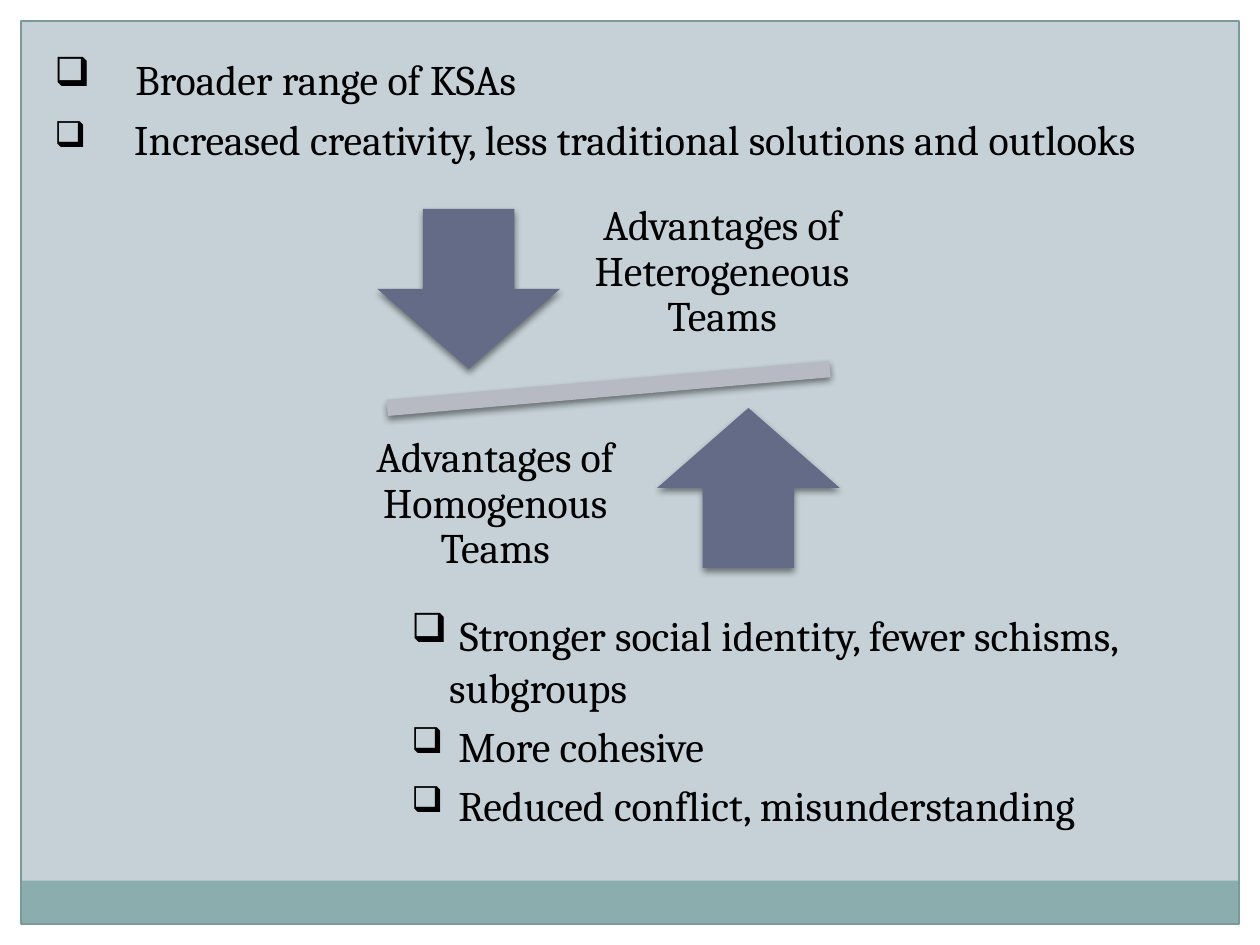
from dataclasses import dataclass
from lxml.etree import SubElement
from pptx import Presentation
from pptx.dml.color import RGBColor
from pptx.enum.shapes import MSO_SHAPE
from pptx.enum.text import MSO_ANCHOR, PP_ALIGN
from pptx.oxml.ns import qn
from pptx.util import Inches, Pt


@dataclass(frozen=True)
class Theme:
    background: str = "C5D1D7"
    margin: str = "FFFFFF"
    band: str = "8CADAE"
    frame: str = "7C999A"
    arrow: str = "646B86"
    beam: str = "B8BAC3"
    ink: str = "000000"
    font: str = "Cambria"
    text: int = 24
    lead: int = 27


THEME = Theme()
COLUMNS, ROWS = 60, 45
WIDTH, HEIGHT = Inches(10), Inches(7.5)

LISTS = [
    {"area": (2, 2, 55, 10.5), "indent": 0.56, "items": [
        "Broader range of KSAs",
        "Increased creativity, less traditional solutions and outlooks",
    ]},
    {"area": (19, 28.5, 38.5, 9.3), "indent": 0.3, "items": [
        "Stronger social identity, fewer schisms, subgroups",
        "More cohesive",
        "Reduced conflict, misunderstanding",
    ]},
]

PIVOT = (28.98, 18.5)
BEAM_SIZE = (28.8, 3.3)
ARROW_SIZE, ARROW_OFFSET = (8.7, 7.62), (6.66, 4.74)
LABEL_SIZE, LABEL_OFFSET = (16.5, 8), (5.4, 5.52)
SIDES = [
    (-1, MSO_SHAPE.DOWN_ARROW, "Advantages of Heterogeneous Teams"),
    (1, MSO_SHAPE.UP_ARROW, "Advantages of Homogenous Teams"),
]


def place(left, top, width, height):
    return (int(WIDTH * left / COLUMNS), int(HEIGHT * top / ROWS),
            int(WIDTH * width / COLUMNS), int(HEIGHT * height / ROWS))


def around_pivot(size, offset=(0, 0), across=0, down=0):
    width, height = size
    return (PIVOT[0] + across * offset[0] - width / 2,
            PIVOT[1] + down * offset[1] - height / 2, width, height)


def add_block(page, kind, area, fill=None, line=None):
    block = page.shapes.add_shape(kind, *place(*area))
    block.shadow.inherit = False
    if fill:
        block.fill.solid()
        block.fill.fore_color.rgb = RGBColor.from_string(fill)
    else:
        block.fill.background()
    if line:
        block.line.color.rgb = RGBColor.from_string(line)
        block.line.width = Pt(0.75)
    else:
        block.line.fill.background()
    return block


def add_shadow(block):
    effects = block._element.spPr.find(qn("a:effectLst"))
    shadow = SubElement(effects, qn("a:outerShdw"), blurRad=str(Pt(4)),
                        dist=str(Pt(2)), dir="5400000", rotWithShape="0")
    color = SubElement(shadow, qn("a:srgbClr"), val=THEME.ink)
    SubElement(color, qn("a:alpha"), val="45000")


def add_text_box(page, area):
    box = page.shapes.add_textbox(*place(*area))
    box.text_frame.word_wrap = True
    return box.text_frame


def add_span(para, text, size=THEME.text):
    span = para.add_run()
    span.text = text
    span.font.name = THEME.font
    span.font.size = Pt(size)
    span.font.color.rgb = RGBColor.from_string(THEME.ink)


def add_label(page, area, text):
    frame = add_text_box(page, area)
    frame.vertical_anchor = MSO_ANCHOR.MIDDLE
    frame.margin_left = frame.margin_right = Inches(0.19)
    frame.margin_top = frame.margin_bottom = Inches(0.19)
    para = frame.paragraphs[0]
    para.alignment = PP_ALIGN.CENTER
    para.line_spacing = 0.9
    add_span(para, text)


def add_list(page, area, indent, items):
    frame = add_text_box(page, area)
    for index, item in enumerate(items):
        para = frame.add_paragraph() if index else frame.paragraphs[0]
        para.space_before = Pt(THEME.text * 0.2)
        properties = para._p.get_or_add_pPr()
        properties.set("marL", str(Inches(indent)))
        properties.set("indent", str(-Inches(indent)))
        SubElement(properties, qn("a:buSzPct"), val="85000")
        SubElement(properties, qn("a:buChar"), char="❑")
        add_span(para, " ", THEME.text if index else THEME.lead)
        add_span(para, item)


def add_backdrop(page):
    page.background.fill.solid()
    page.background.fill.fore_color.rgb = RGBColor.from_string(THEME.background)
    margins = [(0, ROWS - 1, COLUMNS, 1), (0, 0, COLUMNS, 1),
               (COLUMNS - 1, 0, 1, ROWS), (0, 0, 1, ROWS)]
    for area in margins:
        add_block(page, MSO_SHAPE.RECTANGLE, area, THEME.margin)
    add_block(page, MSO_SHAPE.RECTANGLE, (1, ROWS - 3.06, COLUMNS - 2, 2.06), THEME.band)
    add_block(page, MSO_SHAPE.RECTANGLE, (1, 1, COLUMNS - 2, ROWS - 2), line=THEME.frame)


def add_balance(page):
    beam = add_block(page, MSO_SHAPE.MATH_MINUS, around_pivot(BEAM_SIZE), THEME.beam)
    beam.rotation = 355
    add_shadow(beam)
    for side, kind, text in SIDES:
        area = around_pivot(ARROW_SIZE, ARROW_OFFSET, side, side)
        add_shadow(add_block(page, kind, area, THEME.arrow))
        add_label(page, around_pivot(LABEL_SIZE, LABEL_OFFSET, -side, side), text)


def main():
    deck = Presentation()
    deck.slide_width, deck.slide_height = WIDTH, HEIGHT
    page = deck.slides.add_slide(deck.slide_layouts[6])
    add_backdrop(page)
    add_balance(page)
    for entry in LISTS:
        add_list(page, **entry)
    deck.save("out.pptx")


if __name__ == "__main__":
    main()
